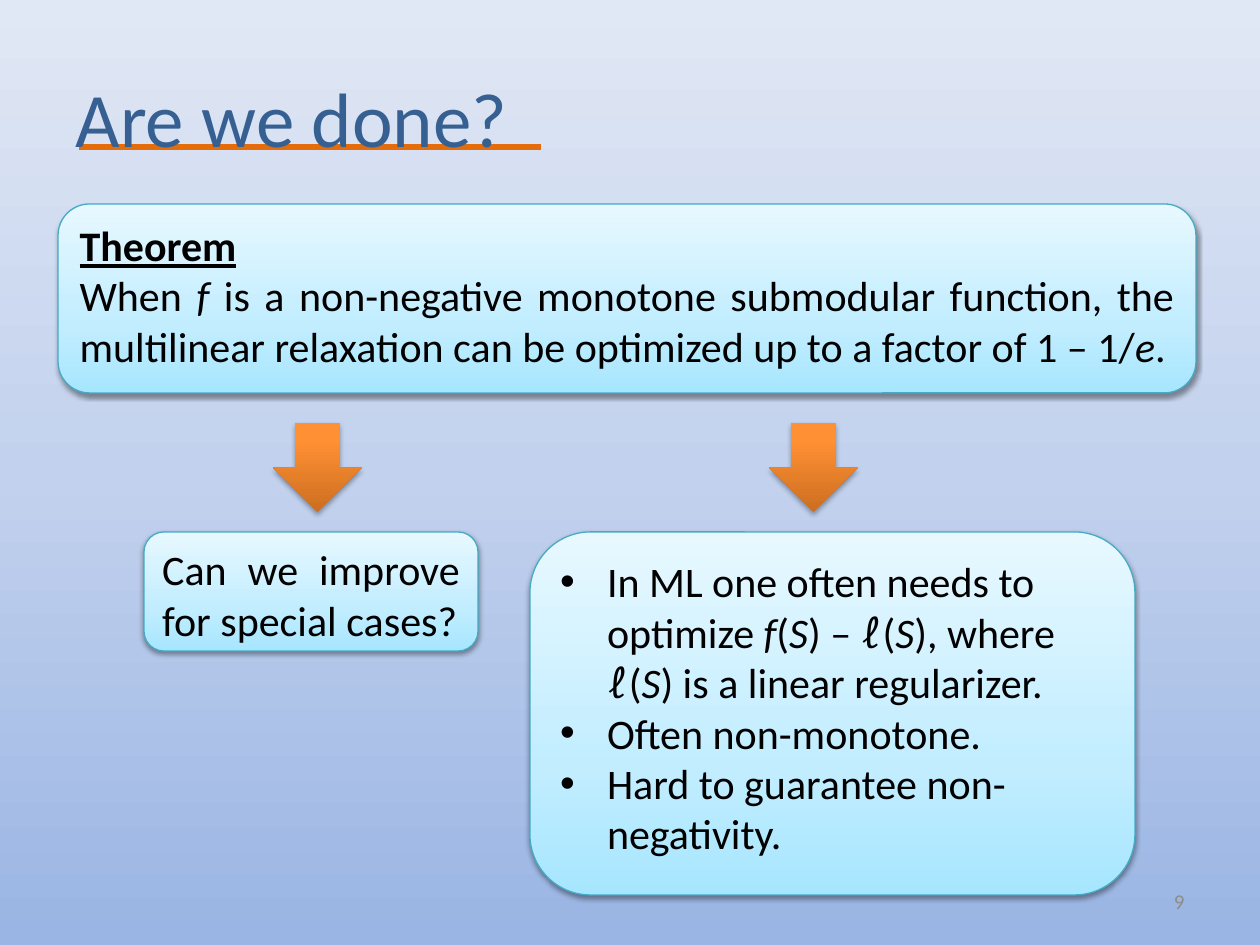
from lxml import etree
from pptx import Presentation
from pptx import util as u
from pptx.dml.color import RGBColor
from pptx.enum import shapes, text
from pptx.oxml.ns import qn

EMU_PER_PX = 914400 / 126
COLORS = {"rule": "E46C0A", "title": "376092", "number": "8C8C8C",
          "text": "000000", "border": "46AAC5", "shadow": "000000"}
GRADIENTS = {
    "background": [(0, "9AB5E4"), (50, "C2D1ED"), (100, "E1E8F5")],
    "box": [(0, "A7E6FF"), (35, "C1EDFF"), (100, "E7F8FF")],
    "arrow": [(0, "CC6E20"), (80, "FF9034"), (100, "FF9136")],
}
# Shadow values: opacity in percent, blur and distance in points
SHADOWS = {"box": (38, 3.1, 1.6), "arrow": (35, 3.1, 1.8)}

# Content: a paragraph is a list of (text, format) runs
PLAIN, ITALIC = {}, {"italic": True}
HEADING = {"bold": True, "underline": True}
SCRIPT = {"name": "Cambria"}
TITLE = "Are we done?"
NUMBER = "9"
THEOREM = [
    [("Theorem", HEADING)],
    [("When ", PLAIN), ("f", ITALIC),
     (" is a non-negative monotone submodular function, the multilinear "
      "relaxation can be optimized up to a factor of 1 – 1/", PLAIN),
     ("e", ITALIC), (".", PLAIN)],
]
QUESTION = [[("Can we improve for special cases?", PLAIN)]]
ISSUES = [
    [("In ML one often needs to optimize ", PLAIN), ("f", ITALIC), ("(", PLAIN),
     ("S", ITALIC), (") – ", PLAIN), ("ℓ", SCRIPT), ("(", PLAIN), ("S", ITALIC),
     ("), where ", PLAIN), ("ℓ", SCRIPT), ("(", PLAIN), ("S", ITALIC),
     (") is a linear regularizer.", PLAIN)],
    [("Often non-monotone.", PLAIN)],
    [("Hard to guarantee non-negativity.", PLAIN)],
]
# Boxes: paragraphs, place in px, bulleted
BOXES = [
    (THEOREM, (58, 204, 1138, 189), False),
    (QUESTION, (144, 532, 334, 119), False),
    (ISSUES, (530, 532, 605, 363), True),
]
ARROW_LEFTS, ARROW_TOP, ARROW_SIZE = (273, 769), 423, 89
INDENT = 47


def px(*lengths):
    return [u.Emu(round(n * EMU_PER_PX)) for n in lengths]


def rgb(name):
    return RGBColor.from_string(COLORS[name])


def add_color(parent, value):
    return etree.SubElement(parent, qn("a:srgbClr"), val=value)


def set_gradient(fill, owner, kind):
    fill.gradient()
    fill.gradient_angle = 90
    stops = next(owner.iter(qn("a:gsLst")))
    for stop in list(stops):
        stops.remove(stop)
    for position, value in GRADIENTS[kind]:
        add_color(etree.SubElement(stops, qn("a:gs"), pos=str(position * 1000)), value)


def set_shadow(shape, kind):
    opacity, blur, distance = SHADOWS[kind]
    shape.shadow.inherit = False
    effects = next(shape.element.iter(qn("a:effectLst")))
    outer = etree.SubElement(effects, qn("a:outerShdw"), blurRad=str(u.Pt(blur)),
                             dist=str(u.Pt(distance)), dir="5400000", rotWithShape="0")
    etree.SubElement(add_color(outer, COLORS["shadow"]), qn("a:alpha"),
                     val=str(opacity * 1000))


def set_font(font, color, size, **formats):
    font.color.rgb = rgb(color)
    for key, value in {"name": "Calibri", "size": u.Pt(size), **formats}.items():
        setattr(font, key, value)


def add_bullet(paragraph):
    properties = paragraph._p.get_or_add_pPr()
    indent = px(INDENT)[0]
    properties.set("marL", str(indent))
    properties.set("indent", str(-indent))
    etree.SubElement(properties, qn("a:buFont"), typeface="Arial")
    etree.SubElement(properties, qn("a:buChar"), char="•")


def add_shape(slide, preset, place, kind):
    shape = slide.shapes.add_shape(preset, *px(*place))
    set_gradient(shape.fill, shape.element, kind)
    set_shadow(shape, kind)
    return shape


def add_box(slide, paragraphs, place, bulleted):
    box = add_shape(slide, shapes.MSO_SHAPE.ROUNDED_RECTANGLE, place, "box")
    box.line.color.rgb = rgb("border")
    box.line.width = u.Pt(0.75)
    frame = box.text_frame
    frame.word_wrap = True
    frame.vertical_anchor = text.MSO_ANCHOR.TOP
    for i, runs in enumerate(paragraphs):
        paragraph = frame.add_paragraph() if i else frame.paragraphs[0]
        paragraph.alignment = text.PP_ALIGN.LEFT if bulleted else text.PP_ALIGN.JUSTIFY
        if bulleted:
            add_bullet(paragraph)
        for words, formats in runs:
            run = paragraph.add_run()
            run.text = words
            set_font(run.font, "text", 24, **formats)


def add_line_of_text(shape, words, align, color, size):
    frame = shape.text_frame
    frame.text = words
    for key, value in {"word_wrap": True, "auto_size": text.MSO_AUTO_SIZE.NONE,
                       "vertical_anchor": text.MSO_ANCHOR.MIDDLE}.items():
        setattr(frame, key, value)
    frame.paragraphs[0].alignment = align
    set_font(frame.paragraphs[0].runs[0].font, color, size)


def main():
    deck = Presentation()
    deck.slide_width, deck.slide_height = px(1260, 945)
    slide = deck.slides.add_slide(deck.slide_layouts[5])
    set_gradient(slide.background.fill, slide.element, "background")

    # Title, with the rule behind it
    title = slide.shapes.title
    title.left, title.top, title.width, title.height = px(63, 38, 1134, 157)
    add_line_of_text(title, TITLE, text.PP_ALIGN.LEFT, "title", 44)
    rule = slide.shapes.add_connector(shapes.MSO_CONNECTOR.STRAIGHT,
                                      *px(79, 147, 541, 147))
    rule.line.color.rgb = rgb("rule")
    rule.line.width = u.Pt(3)
    etree.SubElement(rule.element.spPr, qn("a:effectLst"))
    title.element.addprevious(rule.element)

    # Slide number
    number = slide.shapes.add_textbox(*px(903, 876, 294, 50))
    add_line_of_text(number, NUMBER, text.PP_ALIGN.RIGHT, "number", 12)

    # Theorem and what follows from it
    for paragraphs, place, bulleted in BOXES:
        add_box(slide, paragraphs, place, bulleted)
    for left in ARROW_LEFTS:
        arrow = add_shape(slide, shapes.MSO_SHAPE.DOWN_ARROW,
                          (left, ARROW_TOP, ARROW_SIZE, ARROW_SIZE), "arrow")
        arrow.line.fill.background()

    deck.save("out.pptx")


if __name__ == "__main__":
    main()
